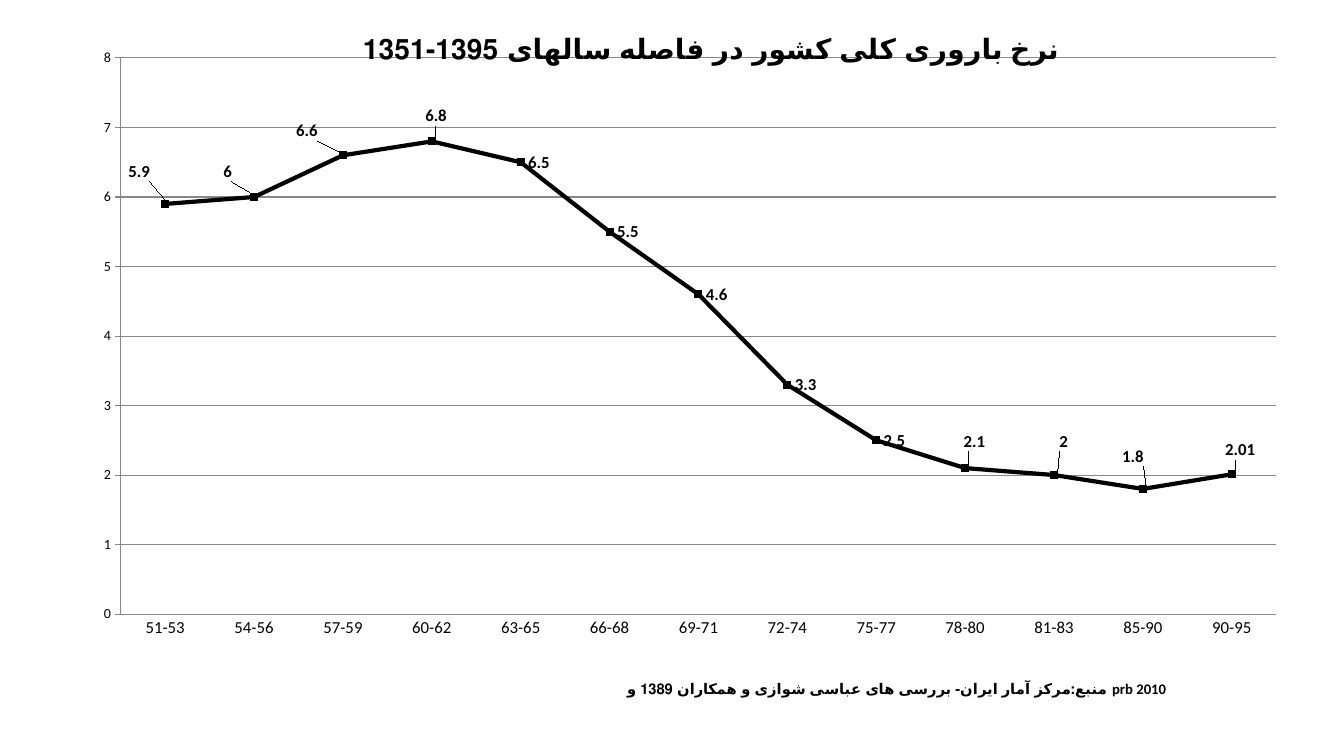
"""Builds a slide with a line chart of Iran's total fertility rate, 1351-1395."""
from lxml.etree import SubElement
from pptx import Presentation
from pptx.chart.data import CategoryChartData
from pptx.dml.color import RGBColor
from pptx.enum.chart import XL_CHART_TYPE as ChartType, XL_LABEL_POSITION as LabelPos
from pptx.enum.chart import XL_MARKER_STYLE as Marker, XL_TICK_MARK as Tick
from pptx.oxml.ns import qn
from pptx.util import Inches, Pt

WIDTH, HEIGHT = 12, 6.77
BLACK, GRAY = "000000", "878787"


def style(target, text=None, size=10, bold=False, color=BLACK):
    """Sets the text, if given, and the font of a chart part."""
    if text is not None:
        paragraph = target.text_frame.paragraphs[0]
        target = paragraph.add_run()
        target.text = text
    font = target.font
    font.name, font.size, font.bold = "Calibri", Pt(size), bold
    font.color.rgb = RGBColor.from_string(color)


def place(parent, index, **settings):
    """Puts a manual layout at the given child index."""
    for old in parent.findall(qn("c:layout")):
        parent.remove(old)
    layout = SubElement(parent, qn("c:layout"))
    manual = SubElement(layout, qn("c:manualLayout"))
    for name, value in settings.items():
        SubElement(manual, qn(f"c:{name}")).set("val", str(value))
    parent.insert(index, layout)


deck = Presentation()
deck.slide_width, deck.slide_height = Inches(13.33), Inches(7.5)
slide = deck.slides.add_slide(deck.slide_layouts[6])

rates = {
    "51-53": 5.9, "54-56": 6, "57-59": 6.6, "60-62": 6.8, "63-65": 6.5,
    "66-68": 5.5, "69-71": 4.6, "72-74": 3.3, "75-77": 2.5, "78-80": 2.1,
    "81-83": 2, "85-90": 1.8, "90-95": 2.01,
}
fertility = CategoryChartData()
fertility.categories = list(rates)
fertility.add_series("Series 1", list(rates.values()))
chart = slide.shapes.add_chart(
    ChartType.LINE_MARKERS_STACKED, Inches(0.67), Inches(0.21),
    Inches(WIDTH), Inches(HEIGHT), fertility).chart
style(chart)
chart.has_legend = False
plot = chart.plots[0]
plot.vary_by_categories = False
place(chart.element.chart.plotArea, 0, layoutTarget="inner", xMode="edge",
      yMode="edge", x=0.044, y=0.054, w=0.955, h=0.815)

periods, births = chart.category_axis, chart.value_axis
chart.has_title = True
periods.has_title = True
headings = (
    (chart.chart_title, "نرخ باروری کلی کشور در فاصله سالهای 1395-1351", 20, 0.24, 0.01),
    (periods.axis_title,
     "منبع:مرکز آمار ایران- بررسی های عباسی شوازی و همکاران 1389 و prb 2010",
     10.5, 0.46, 0.96),
)
for heading, words, size, x, y in headings:
    style(heading, words, size, bold=True)
    place(heading.text_frame.paragraphs[0]._p.getparent().getparent().getparent(), 1,
          xMode="edge", yMode="edge", x=x, y=y)

style(periods.tick_labels, size=12)
style(births.tick_labels)
periods.major_tick_mark, births.major_tick_mark = Tick.NONE, Tick.OUTSIDE
births.minimum_scale, births.maximum_scale, births.major_unit = 0, 8, 1
births.has_major_gridlines = True
for rule in (periods.format.line, births.format.line, births.major_gridlines.format.line):
    rule.color.rgb = RGBColor.from_string(GRAY)
    rule.width = Pt(0.75)

curve = plot.series[0]
curve.smooth = False
curve.format.line.color.rgb = RGBColor.from_string(BLACK)
curve.format.line.width = Pt(3)
curve.marker.style, curve.marker.size = Marker.SQUARE, 5
curve.marker.format.fill.solid()
curve.marker.format.fill.fore_color.rgb = RGBColor.from_string(BLACK)
curve.marker.format.line.color.rgb = RGBColor.from_string(BLACK)

values = curve.data_labels
values.show_value = True
values.position = LabelPos.RIGHT
style(values, size=12, bold=True)

shifts = {
    0: (-0.44, -0.32), 1: (-0.38, -0.25), 2: (-0.54, -0.24), 3: (-0.14, -0.25),
    9: (-0.09, -0.26), 10: (-0.02, -0.33), 11: (-0.28, -0.32), 12: (-0.14, -0.24),
}
for point, (right, down) in shifts.items():
    label = curve.points[point].data_label
    style(label, size=12, bold=True)
    label.position = LabelPos.RIGHT
    place(values._element.find(f"{qn('c:dLbl')}[{len(values._element.findall(qn('c:dLbl')))}]"),
          1, x=right / WIDTH, y=down / HEIGHT)

deck.save("out.pptx")
